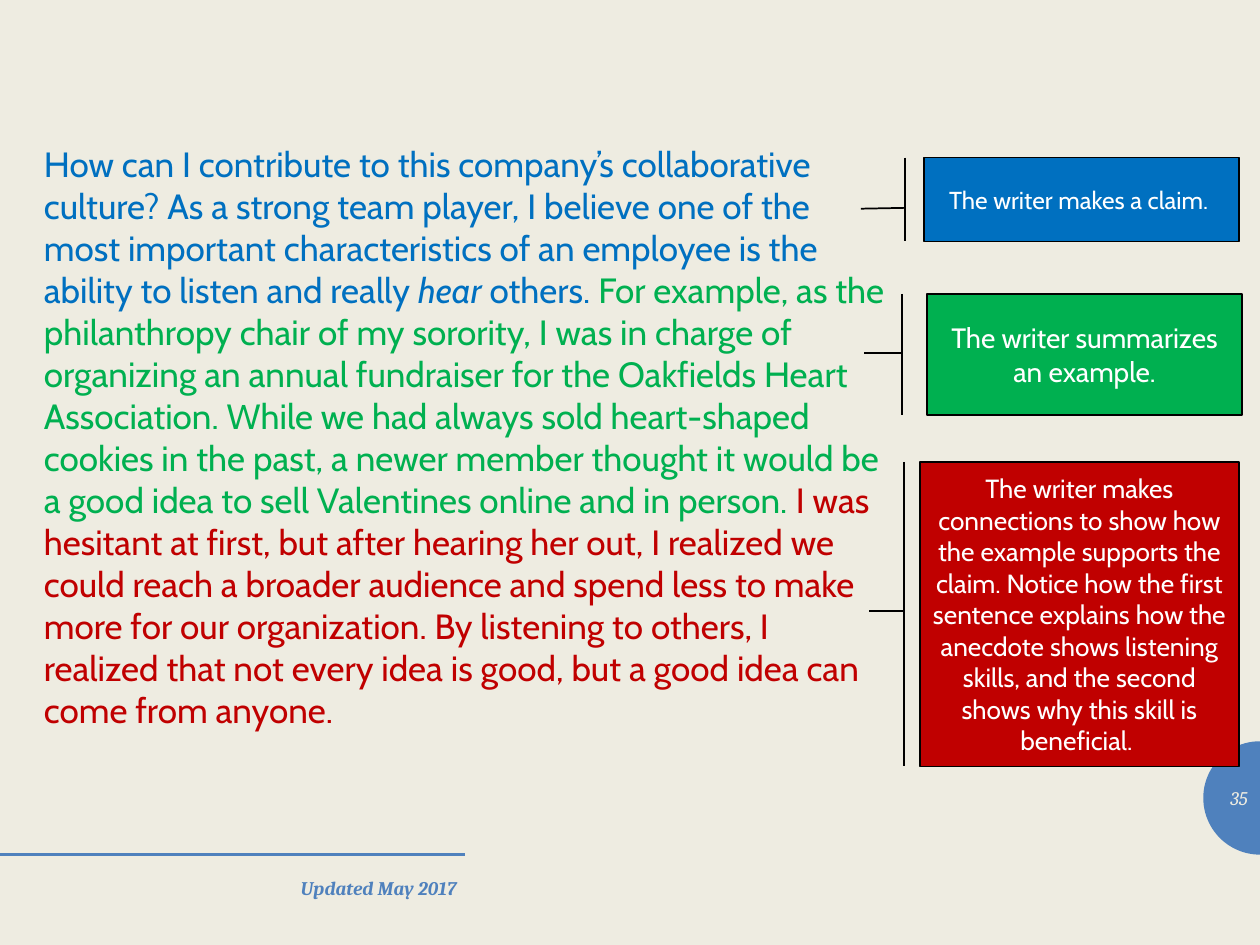
import dataclasses
import math

import pptx
import pptx.dml.color
import pptx.enum.shapes
import pptx.enum.text
import pptx.util
from lxml import etree

ALIGN = pptx.enum.text.PP_ALIGN
ANCHOR = pptx.enum.text.MSO_ANCHOR
COLUMNS, ROWS = 120, 90
DRAWING = "http://schemas.openxmlformats.org/drawingml/2006/main"


@dataclasses.dataclass(frozen=True)
class Theme:
    """Colours, fonts and type sizes of the slide."""
    paper: str = "EEECE1"
    accent: str = "4F81BD"
    claim: str = "0070C0"
    example: str = "00B050"
    connection: str = "C00000"
    outline: str = "000000"
    label: str = "FFFFFF"
    body_font: str = "Cabin"
    footer_font: str = "Cambria"
    body_size: int = 20
    footer_size: int = 11


@dataclasses.dataclass(frozen=True)
class Box:
    """A rectangle in grid columns and rows, with its grid cell in EMU."""
    left: float
    top: float
    width: float
    height: float
    cell: int = pptx.util.Inches(10) // COLUMNS

    def place(self):
        """Return left, top, width and height in EMU."""
        return [round(n * self.cell) for n in (self.left, self.top, self.width, self.height)]


THEME = Theme()

PARAGRAPH = [
    ("How can I contribute to this company’s collaborative culture? As a strong team player, "
     "I believe one of the most important characteristics of an employee is the ability to "
     "listen and really ", THEME.claim, False),
    ("hear", THEME.claim, True),
    (" others. ", THEME.claim, False),
    ("For example, as the philanthropy chair of my sorority, I was in charge of organizing an "
     "annual fundraiser for the Oakfields Heart Association. While we had always sold "
     "heart-shaped cookies in the past, a newer member thought it would be a good idea to sell "
     "Valentines online and in person. ", THEME.example, False),
    ("I was hesitant at first, but after hearing her out, I realized we could reach a broader "
     "audience and spend less to make more for our organization. By listening to others, I "
     "realized that not every idea is good, but a good idea can come from anyone.",
     THEME.connection, False),
]

CALLOUTS = [
    (Box(88, 15, 30, 8), THEME.claim, 14, (0.6, -0.06, 0.61, -0.2),
     "The writer makes a claim. "),
    (Box(88.3, 28, 30, 11.5), THEME.example, 16, (0.49, -0.08, 0.49, -0.2),
     "The writer summarizes an example."),
    (Box(87.6, 44, 30.4, 29), THEME.connection, 15, (0.49, -0.05, 0.49, -0.16),
     "The writer makes connections to show how the example supports the claim. Notice how the "
     "first sentence explains how the anecdote shows listening skills, and the second shows "
     "why this skill is beneficial. "),
]


def rgb(value):
    """Turn a hex string into a colour."""
    return pptx.dml.color.RGBColor.from_string(value)


def add_run(paragraph, text, color, **font):
    """Append a run with the given colour and font values."""
    run = paragraph.add_run()
    run.text = text
    run.font.color.rgb = rgb(color)
    for name, value in font.items():
        setattr(run.font, name, value)


def first_paragraph(shape, anchor, alignment):
    """Set up wrapped text in a shape and return its first paragraph."""
    frame = shape.text_frame
    for name, value in {"word_wrap": True, "vertical_anchor": anchor}.items():
        setattr(frame, name, value)
    paragraph = frame.paragraphs[0]
    paragraph.alignment = alignment
    return paragraph


def add_sample(slide, box):
    """Place the colour-coded sample paragraph."""
    shape = slide.shapes.add_textbox(*box.place())
    paragraph = first_paragraph(shape, ANCHOR.TOP, ALIGN.LEFT)
    for text, color, italic in PARAGRAPH:
        add_run(paragraph, text, color, italic=italic, name=THEME.body_font,
                size=pptx.util.Pt(THEME.body_size))


def add_callout(slide, box, color, size, leader, text):
    """Place one filled callout with its accent bar and leader."""
    kind = pptx.enum.shapes.MSO_SHAPE.LINE_CALLOUT_1_BORDER_AND_ACCENT_BAR
    shape = slide.shapes.add_shape(kind, *box.place())
    shape.shadow.inherit = False
    for index, value in enumerate(leader):
        shape.adjustments[index] = value
    shape.fill.solid()
    shape.fill.fore_color.rgb = rgb(color)
    shape.line.color.rgb = rgb(THEME.outline)
    shape.line.width = pptx.util.Pt(1)
    paragraph = first_paragraph(shape, ANCHOR.MIDDLE, ALIGN.CENTER)
    add_run(paragraph, text, THEME.label, name=THEME.body_font, size=pptx.util.Pt(size))


def add_footer_text(slide, box, text, color, anchor, bold):
    """Place one right-aligned italic footer text."""
    shape = slide.shapes.add_textbox(*box.place())
    paragraph = first_paragraph(shape, anchor, ALIGN.RIGHT)
    add_run(paragraph, text, color, name=THEME.footer_font, bold=bold, italic=True,
            size=pptx.util.Pt(THEME.footer_size))


def add_page_tab(slide, box):
    """Place the half disc at the slide edge with the page number."""
    left, top, width, height = box.place()
    angles = [math.pi * step / 48 for step in range(49)]
    points = [(left + width * (1 - math.sin(angle)), top + height * (1 - math.cos(angle)) / 2)
              for angle in angles]
    builder = slide.shapes.build_freeform(*points[0])
    builder.add_line_segments(points[1:], close=True)
    shape = builder.convert_to_shape()
    shape.shadow.inherit = False
    shape.fill.solid()
    shape.fill.fore_color.rgb = rgb(THEME.accent)
    shape.line.fill.background()
    number = Box(box.left, box.top + 3, box.width, 4.8)
    add_footer_text(slide, number, "35", THEME.paper, ANCHOR.MIDDLE, False)


def add_footer(slide, box):
    """Place the footer rule and the date below it."""
    left, top, width, _ = box.place()
    kind = pptx.enum.shapes.MSO_CONNECTOR.STRAIGHT
    rule = slide.shapes.add_connector(kind, left, top, left + width, top)
    rule.line.color.rgb = rgb(THEME.accent)
    rule.line.width = pptx.util.Pt(2)
    etree.SubElement(rule.line._get_or_add_ln().getparent(), f"{{{DRAWING}}}effectLst")
    date = Box(box.left + 7.5, box.top + 1.5, 37.6, 4.8)
    add_footer_text(slide, date, "Updated May 2017 ", THEME.accent, ANCHOR.TOP, True)


def main():
    """Build and save the slide."""
    presentation = pptx.Presentation()
    presentation.slide_width = pptx.util.Inches(10)
    presentation.slide_height = pptx.util.Inches(7.5)
    slide = presentation.slides.add_slide(presentation.slide_layouts[6])
    slide.background.fill.solid()
    slide.background.fill.fore_color.rgb = rgb(THEME.paper)
    add_page_tab(slide, Box(114.6, 70.6, COLUMNS - 114.6, 10.8))
    add_footer(slide, Box(0, 81.4, 44.3, ROWS - 81.4))
    add_sample(slide, Box(3, 13, 83, 57.7))
    for callout in CALLOUTS:
        add_callout(slide, *callout)
    presentation.save("out.pptx")


if __name__ == "__main__":
    main()
